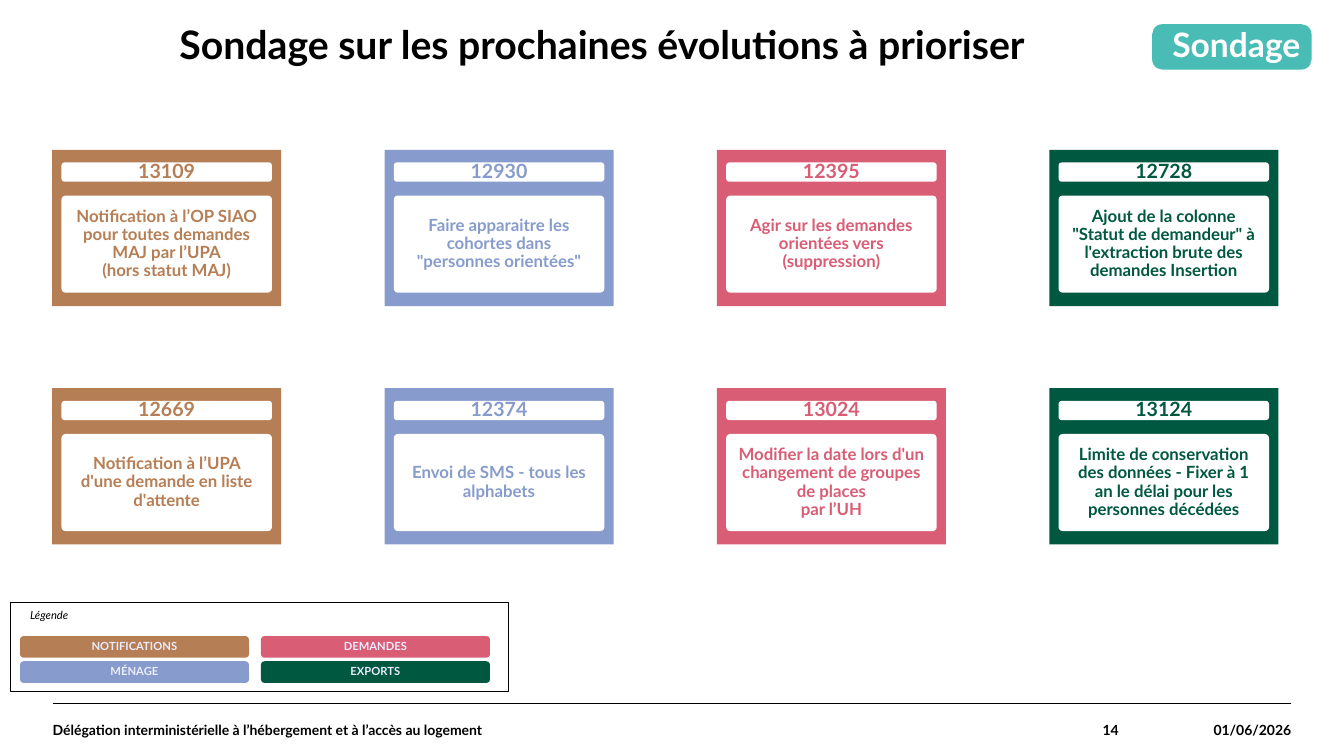
from dataclasses import dataclass

from lxml import etree
from pptx import Presentation
from pptx import util as u
from pptx.dml.color import RGBColor
from pptx.enum import shapes, text
from pptx.oxml.ns import qn

LEFT, CENTER, RIGHT = text.PP_ALIGN.LEFT, text.PP_ALIGN.CENTER, text.PP_ALIGN.RIGHT
RECT, ROUNDED = shapes.MSO_SHAPE.RECTANGLE, shapes.MSO_SHAPE.ROUNDED_RECTANGLE


@dataclass(frozen=True)
class Theme:
    font: str = "Lato"
    ink: str = "000000"
    paper: str = "FFFFFF"
    legend_ink: str = "ECECFE"
    badge: str = "4ABCB6"
    notifications: str = "B67E54"
    household: str = "879CCC"
    requests: str = "D85D75"
    exports: str = "005841"
    title_size: float = 28
    badge_size: float = 24
    number_size: float = 14
    card_size: float = 12
    footer_size: float = 10
    legend_size: float = 8


class SlideBuilder:
    def __init__(self, page, theme):
        self.page = page
        self.theme = theme

    def set_text(self, box, lines, size, color, align=LEFT, spacing=0.9, bold=True,
                 italic=False, anchor=text.MSO_ANCHOR.MIDDLE, insets=(7.2, 3.6, 7.2, 3.6)):
        """Fill a shape with one paragraph per line; insets are left, top, right, bottom."""
        frame = box.text_frame
        frame.word_wrap = True
        frame.vertical_anchor = anchor
        (frame.margin_left, frame.margin_top,
         frame.margin_right, frame.margin_bottom) = map(u.Pt, insets)
        frame.text = "\n".join(lines)
        for para in frame.paragraphs:
            para.alignment = align
            para.line_spacing = spacing
            font = para.font
            font.name, font.size = self.theme.font, u.Pt(size)
            font.bold, font.italic = bold, italic
            font.color.rgb = RGBColor.from_string(color)

    def shape(self, kind, area, fill, parent=None, radius=None, line=None):
        """Add a filled shape to the page or to a group; line is an outline width."""
        owner = parent or self.page
        box = owner.shapes.add_shape(kind, *map(u.Pt, area))
        box.shadow.inherit = False
        box.fill.solid()
        box.fill.fore_color.rgb = RGBColor.from_string(fill)
        if line is None:
            box.line.fill.background()
        else:
            box.line.color.rgb = RGBColor.from_string(self.theme.ink)
            box.line.width = u.Pt(line)
        if radius is not None:
            box.adjustments[0] = radius
        return box

    def label(self, area, line, size, **style):
        box = self.page.shapes.add_textbox(*map(u.Pt, area))
        self.set_text(box, [line], size, self.theme.ink, **style)

    def rule(self, left, right, top, width):
        line = self.page.shapes.add_connector(
            shapes.MSO_CONNECTOR.STRAIGHT, u.Pt(left), u.Pt(top), u.Pt(right), u.Pt(top))
        line.line.color.rgb = RGBColor.from_string(self.theme.ink)
        line.line.width = u.Pt(width)
        etree.SubElement(line._element.spPr, qn("a:effectLst"))

    def card(self, left, top, color, number, lines):
        group = self.page.shapes.add_group_shape()
        self.shape(RECT, (left, top, 163.6, 111.6), color, group)
        inner_left, inner_width = left + 6.6, 150.4
        heading = self.shape(ROUNDED, (inner_left, top + 9, inner_width, 13.8),
                             self.theme.paper, group)
        self.set_text(heading, [number], self.theme.number_size, color, CENTER)
        body = self.shape(ROUNDED, (inner_left, top + 32.7, inner_width, 69.4),
                          self.theme.paper, group, radius=0.043)
        self.set_text(body, lines, self.theme.card_size, color, CENTER)

    def legend_key(self, left, top, color, name):
        box = self.shape(ROUNDED, (left, top, 163.6, 15.5), color)
        self.set_text(box, [name], self.theme.legend_size, self.theme.legend_ink, CENTER)


def main():
    theme = Theme()
    deck = Presentation()
    deck.slide_width, deck.slide_height = u.Pt(960), u.Pt(540)
    slide = SlideBuilder(deck.slides.add_slide(deck.slide_layouts[6]), theme)
    flush = (0, 0, 0, 0)

    slide.label((128.2, 18, 793.4, 30.2), "Sondage sur les prochaines évolutions à prioriser",
                theme.title_size, anchor=text.MSO_ANCHOR.TOP, insets=flush)
    badge = slide.shape(ROUNDED, (823, 17.3, 113.8, 32.4), theme.badge, radius=0.222)
    slide.set_text(badge, ["Sondage"], theme.badge_size, theme.paper, RIGHT,
                   spacing=0.95, insets=(5.8, 0, 5.8, 0.7))

    card_columns = [
        (theme.notifications, [
            ("13109", ["Notification à l’OP SIAO pour toutes demandes MAJ par l’UPA",
                       "(hors statut MAJ)"]),
            ("12669", ["Notification à l’UPA d'une demande en liste d'attente"]),
        ]),
        (theme.household, [
            ("12930", ["Faire apparaitre les cohortes dans \"personnes orientées\""]),
            ("12374", ["Envoi de SMS - tous les alphabets"]),
        ]),
        (theme.requests, [
            ("12395", ["Agir sur les demandes orientées vers", "(suppression)"]),
            ("13024", ["Modifier la date lors d'un changement de groupes de places",
                       "par l’UH"]),
        ]),
        (theme.exports, [
            ("12728", ["Ajout de la colonne \"Statut de demandeur\" à l'extraction "
                       "brute des demandes Insertion"]),
            ("13124", ["Limite de conservation des données - Fixer à 1 an le délai "
                       "pour les personnes décédées"]),
        ]),
    ]
    for column, (color, cards) in enumerate(card_columns):
        for row, (number, lines) in enumerate(cards):
            slide.card(37.3 + 237.4 * column, 107 + 170.3 * row, color, number, lines)

    slide.shape(RECT, (7.2, 429.8, 355.7, 64.1), theme.paper, line=0.25)
    slide.label((14.4, 431.3, 157, 17.3), "Légende", theme.legend_size, spacing=1.0,
                bold=False, italic=True, anchor=text.MSO_ANCHOR.TOP)
    legend_columns = [
        [(theme.notifications, "NOTIFICATIONS"), (theme.household, "MÉNAGE")],
        [(theme.requests, "DEMANDES"), (theme.exports, "EXPORTS")],
    ]
    for column, keys in enumerate(legend_columns):
        for row, (color, name) in enumerate(keys):
            slide.legend_key(14.3 + 172.1 * column, 454.3 + 18 * row, color, name)

    slide.rule(37.7, 922.3, 502.4, 0.8)
    footers = [
        (37.7, 620, LEFT, "Délégation interministérielle à l’hébergement et à l’accès au logement"),
        (657.4, 141.8, RIGHT, "14"),
        (799.2, 123.1, RIGHT, "01/06/2026"),
    ]
    for left, width, align, line in footers:
        slide.label((left, 502.6, width, 37.4), line, theme.footer_size,
                    align=align, spacing=1.0, insets=flush)

    deck.save("out.pptx")


if __name__ == "__main__":
    main()
